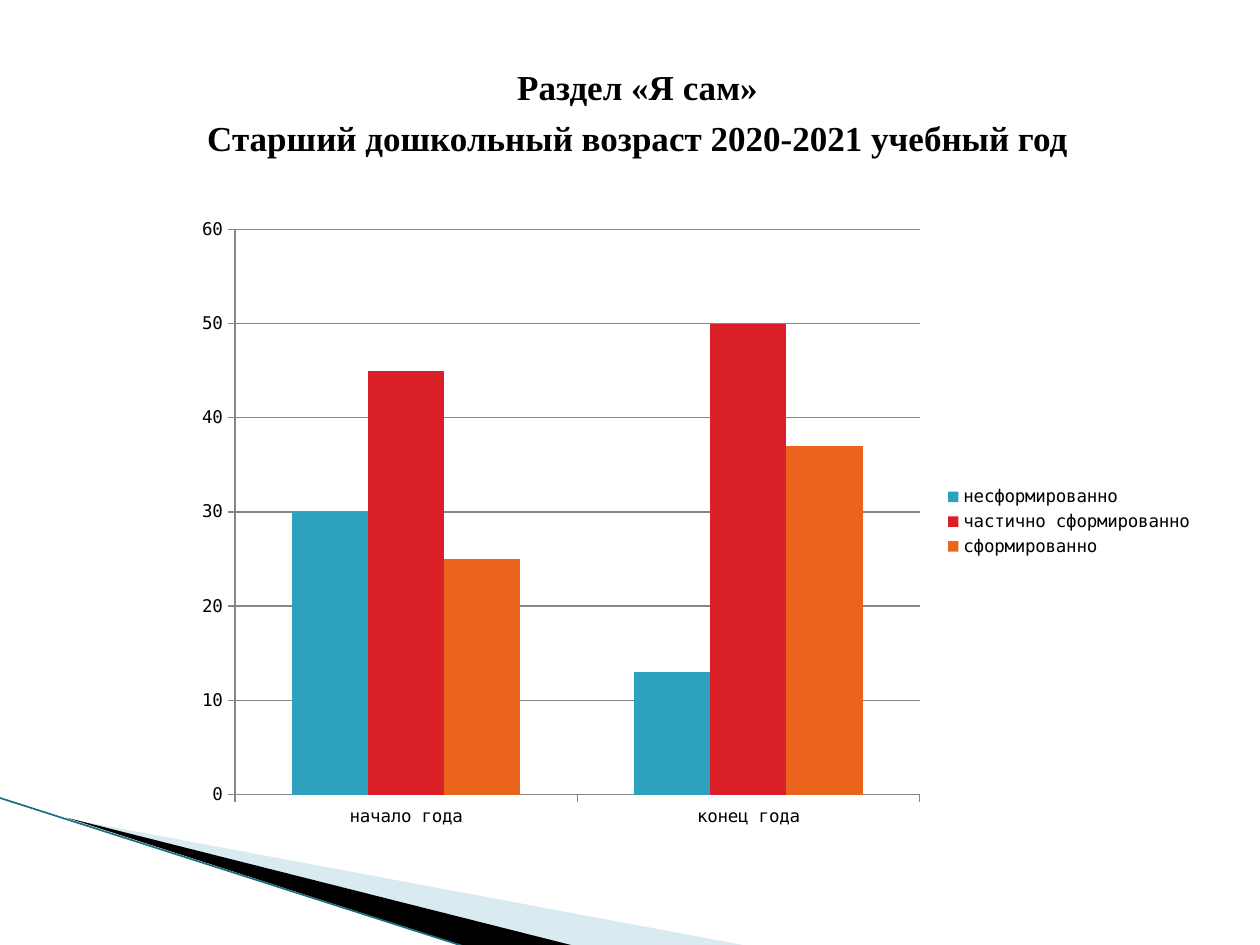
from lxml import etree
from pptx import Presentation
from pptx.chart.data import CategoryChartData
from pptx.dml.color import RGBColor
from pptx.enum.chart import XL_CHART_TYPE, XL_LEGEND_POSITION, XL_TICK_MARK
from pptx.enum.shapes import MSO_CONNECTOR
from pptx.enum.text import PP_ALIGN
from pptx.oxml import parse_xml
from pptx.oxml.ns import nsdecls, qn
from pptx.util import Inches, Pt

CLUSTERED = XL_CHART_TYPE.COLUMN_CLUSTERED
LEGEND_RIGHT = XL_LEGEND_POSITION.RIGHT
TICK_OUTSIDE = XL_TICK_MARK.OUTSIDE
STRAIGHT = MSO_CONNECTOR.STRAIGHT
CENTER = PP_ALIGN.CENTER

COLORS = {
    "text": "000000",
    "pale_wedge": "A0CBDC",
    "dark_wedge": "000000",
    "edge": "1B6F82",
    "grid": "868686",
    "not_formed": "2DA2BF",
    "partly_formed": "DA1F28",
    "formed": "EB641B",
}
TITLE = ["Раздел «Я сам»", "Старший дошкольный возраст 2020-2021 учебный год"]
PERIODS = ["начало года", "конец года"]
LEVELS = [
    ("несформированно", (30, 13), "not_formed"),
    ("частично сформированно", (45, 50), "partly_formed"),
    ("сформированно", (25, 37), "formed"),
]
# Plot area as fractions of the chart frame
PLOT_AREA = {"x": 0.05, "y": 0.04, "w": 0.67, "h": 0.89}


def rgb(name):
    return RGBColor.from_string(COLORS[name])


def add_wedge(slide, points, color, opacity=None):
    corners = [(Inches(x), Inches(y)) for x, y in points]
    builder = slide.shapes.build_freeform(*corners[0])
    builder.add_line_segments(corners[1:], close=True)
    wedge = builder.convert_to_shape()
    wedge.shadow.inherit = False
    wedge.fill.solid()
    wedge.fill.fore_color.rgb = rgb(color)
    wedge.line.fill.background()
    if opacity is not None:
        fill_color = wedge.fill._xPr.find(".//" + qn("a:srgbClr"))
        etree.SubElement(fill_color, qn("a:alpha")).set("val", str(opacity * 1000))


def add_edge(slide, start, end, color, width):
    edge = slide.shapes.add_connector(STRAIGHT, *map(Inches, start + end))
    edge.line.color.rgb = rgb(color)
    edge.line.width = Pt(width)
    etree.SubElement(edge._element.spPr, qn("a:effectLst"))


def add_text(slide, lines, left, top, width, height, *, font, size, color,
             bold=False, align=CENTER, gap=0, indent=0):
    frame = slide.shapes.add_textbox(*map(Inches, (left, top, width, height))).text_frame
    frame.word_wrap = True
    for index, line in enumerate(lines):
        paragraph = frame.add_paragraph() if index else frame.paragraphs[0]
        paragraph.text = line
        paragraph.alignment = align
        if index:
            paragraph.space_before = Pt(gap)
        paragraph._p.get_or_add_pPr().set("marL", str(Inches(indent)))
        paragraph.font.name = font
        paragraph.font.size = Pt(size)
        paragraph.font.bold = bold
        paragraph.font.color.rgb = rgb(color)


def place_plot(chart):
    plot_area = chart._chartSpace.chart.plotArea
    for layout in plot_area.findall(qn("c:layout")):
        plot_area.remove(layout)
    sides = "".join(f'<c:{side} val="{part}"/>' for side, part in PLOT_AREA.items())
    plot_area.insert(0, parse_xml(
        f'<c:layout {nsdecls("c")}><c:manualLayout><c:layoutTarget val="inner"/>'
        f'<c:xMode val="edge"/><c:yMode val="edge"/>{sides}'
        '</c:manualLayout></c:layout>'))


def add_levels_chart(slide, left, top, width, height):
    data = CategoryChartData()
    data.categories = PERIODS
    for name, values, _ in LEVELS:
        data.add_series(name, values)
    chart = slide.shapes.add_chart(
        CLUSTERED, *map(Inches, (left, top, width, height)), data).chart
    chart.has_title = False
    chart.font.name = "DejaVu Sans Mono"
    chart.font.size = Pt(10)
    chart.font.color.rgb = rgb("text")

    # Columns
    plot = chart.plots[0]
    plot.gap_width = 150
    plot.overlap = 0
    plot.vary_by_categories = False
    for series, (_, _, color) in zip(plot.series, LEVELS):
        series.format.fill.solid()
        series.format.fill.fore_color.rgb = rgb(color)

    # Axes, grid and legend
    for axis in (chart.category_axis, chart.value_axis):
        axis.major_tick_mark = TICK_OUTSIDE
        axis.format.line.color.rgb = rgb("grid")
    scale = chart.value_axis
    scale.minimum_scale, scale.maximum_scale, scale.major_unit = 0, 60, 10
    scale.has_major_gridlines = True
    scale.major_gridlines.format.line.color.rgb = rgb("grid")
    chart.has_legend = True
    chart.legend.position = LEGEND_RIGHT
    chart.legend.include_in_layout = False
    place_plot(chart)


def main():
    deck = Presentation()
    deck.slide_width, deck.slide_height = Inches(10), Inches(7.5)
    slide = deck.slides.add_slide(deck.slide_layouts[6])

    # Corner decoration
    add_wedge(slide, [(0.55, 6.5), (5.95, 7.51), (4.56, 7.51)], "pale_wedge", opacity=40)
    add_wedge(slide, [(0.53, 6.49), (4.57, 7.51), (3.72, 7.52)], "dark_wedge")
    add_edge(slide, (-0.01, 6.33), (3.71, 7.52), "edge", 0.95)

    # Title and chart
    add_text(slide, TITLE, 0.5, 0.47, 9, 0.9, font="Times New Roman", size=20,
             color="text", bold=True, gap=5, indent=0.12)
    add_levels_chart(slide, 1.46, 1.62, 8.11, 5.04)

    deck.save("out.pptx")


if __name__ == "__main__":
    main()
